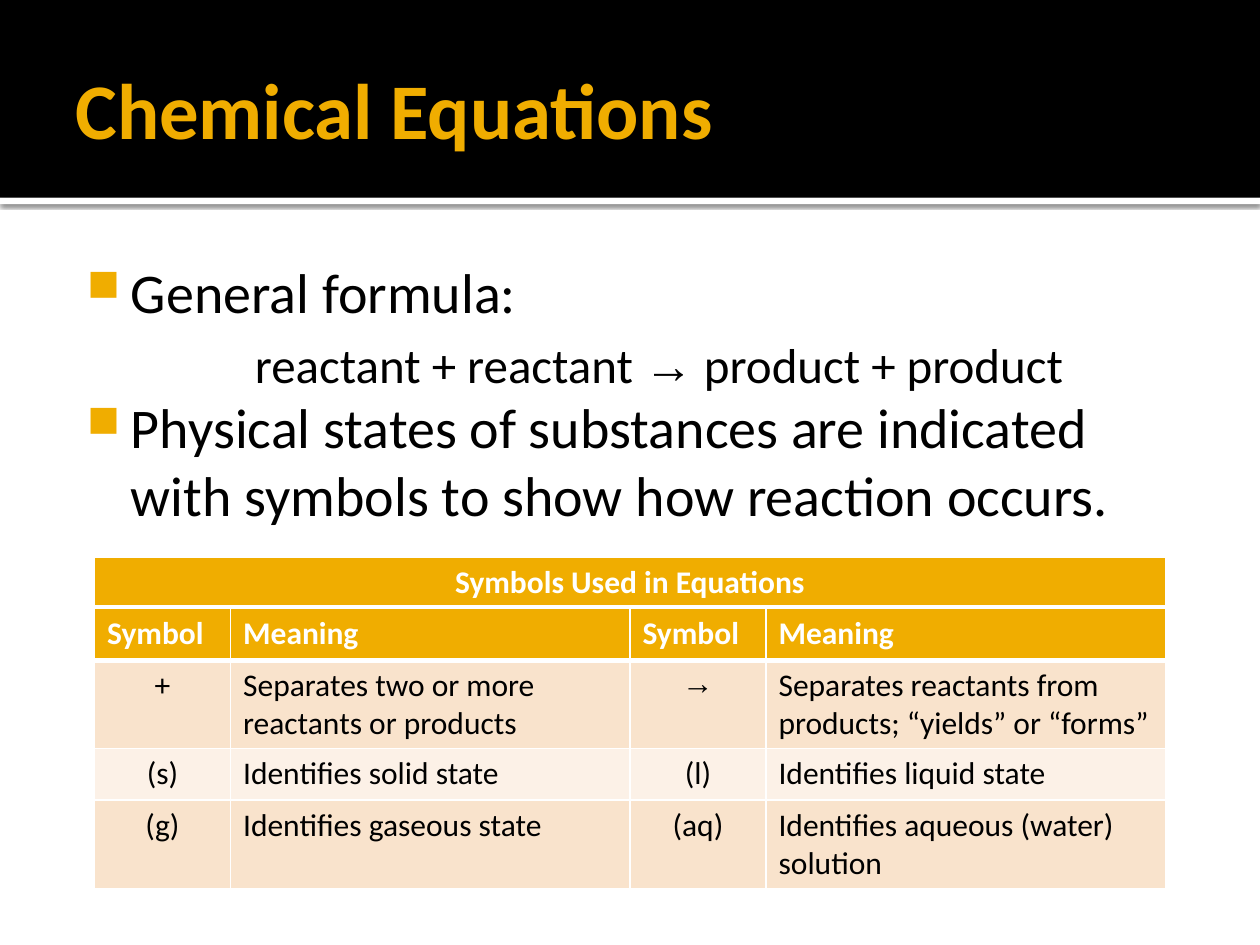
import dataclasses
import typing

import lxml.etree
import pptx
import pptx.dml.color
import pptx.enum.shapes
import pptx.enum.text
import pptx.oxml
import pptx.oxml.ns
import pptx.util

Inches = pptx.util.Inches
Pt = pptx.util.Pt
Align = pptx.enum.text.PP_ALIGN
Anchor = pptx.enum.text.MSO_ANCHOR

COLORS = {
    "gold": "F0AD00",
    "black": "000000",
    "white": "FFFFFF",
    "band": "F9E3CC",
    "pale": "FCF1E7",
}
ARROW = "→"
HEADINGS = ("Symbol", "Meaning") * 2
MEANINGS = [
    ("+", "Separates two or more reactants or products",
     ARROW, "Separates reactants from products; “yields” or “forms”"),
    ("(s)", "Identifies solid state", "(l)", "Identifies liquid state"),
    ("(g)", "Identifies gaseous state", "(aq)", "Identifies aqueous (water) solution"),
]


@dataclasses.dataclass
class Frame:
    left: float
    top: float
    width: float
    height: float

    def lengths(self) -> list[int]:
        return [Inches(value) for value in dataclasses.astuple(self)]


@dataclasses.dataclass
class Style:
    size: float
    color: str = "black"
    bold: bool = False
    align: typing.Any = Align.LEFT


@dataclasses.dataclass
class Line:
    text: str
    style: Style
    left: float = 0
    indent: float = 0
    before: float = 0
    bullet: bool = False


@dataclasses.dataclass
class Row:
    texts: tuple[str, ...]
    height: float
    fill: str
    styles: tuple[Style, ...]
    bottom: float = 1


def rgb(name: str) -> pptx.dml.color.RGBColor:
    return pptx.dml.color.RGBColor.from_string(COLORS[name])


def add_child(parent, tag: str, **attributes):
    child = lxml.etree.SubElement(parent, pptx.oxml.ns.qn(tag))
    for key, value in attributes.items():
        child.set(key, str(value))
    return child


def write(para, text: str, style: Style) -> None:
    para.alignment = style.align
    before, arrow, after = text.partition(ARROW)
    for part in filter(None, (before, arrow, after)):
        span = para.add_run()
        span.text = part
        span.font.name = "Times New Roman" if part == ARROW else "Calibri"
        span.font.size = Pt(style.size)
        span.font.bold = style.bold
        span.font.color.rgb = rgb(style.color)


def add_bar(page, frame: Frame, color: str):
    bar = page.shapes.add_shape(pptx.enum.shapes.MSO_SHAPE.RECTANGLE, *frame.lengths())
    bar.shadow.inherit = False
    bar.fill.solid()
    bar.fill.fore_color.rgb = rgb(color)
    bar.line.fill.background()
    return bar


def add_shadow(shape) -> None:
    effects = shape._element.spPr.find(pptx.oxml.ns.qn("a:effectLst"))
    shadow = add_child(effects, "a:outerShdw", blurRad=Pt(2.5), dist=Pt(0.8),
                       dir=90 * 60000, algn="tl", rotWithShape=0)
    color = add_child(shadow, "a:srgbClr", val=COLORS["black"])
    add_child(color, "a:alpha", val=60000)


def add_text(page, frame: Frame, margins: Frame, anchor, lines: list[Line]) -> None:
    box = page.shapes.add_textbox(*frame.lengths())
    text = box.text_frame
    text.word_wrap = True
    text.vertical_anchor = anchor
    text.margin_left, text.margin_top, text.margin_right, text.margin_bottom = margins.lengths()
    for index, line in enumerate(lines):
        para = text.add_paragraph() if index else text.paragraphs[0]
        write(para, line.text, line.style)
        para.space_before = Pt(line.before)
        properties = para._p.get_or_add_pPr()
        properties.set("marL", str(Inches(line.left)))
        properties.set("indent", str(Inches(line.indent)))
        if line.bullet:
            color = add_child(properties, "a:buClr")
            add_child(color, "a:srgbClr", val=COLORS["gold"])
            add_child(properties, "a:buSzPct", val=80000)
            add_child(properties, "a:buChar", char="■")


def add_borders(cell, bottom: float, top: float) -> None:
    properties = cell._tc.get_or_add_tcPr()
    widths = {"a:lnL": 1, "a:lnR": 1, "a:lnT": top, "a:lnB": bottom}
    for position, (tag, width) in enumerate(widths.items()):
        border = add_child(properties, tag, w=Pt(width))
        fill = add_child(border, "a:solidFill")
        add_child(fill, "a:srgbClr", val=COLORS["white"])
        properties.insert(position, border)


def add_grid(page, left: float, top: float, widths: list[float], rows: list[Row]) -> None:
    frame = Frame(left, top, sum(widths), sum(row.height for row in rows))
    table = page.shapes.add_table(len(rows), len(widths), *frame.lengths()).table
    for column, width in zip(table.columns, widths):
        column.width = Inches(width)
    above = 1
    for index, row in enumerate(rows):
        table.rows[index].height = Inches(row.height)
        for cell, text, style in zip(table.rows[index].cells, row.texts, row.styles):
            cell.fill.solid()
            cell.fill.fore_color.rgb = rgb(row.fill)
            write(cell.text_frame.paragraphs[0], text, style)
            add_borders(cell, row.bottom, above)
        above = row.bottom


def main() -> None:
    deck = pptx.Presentation()
    deck.slide_width, deck.slide_height = Inches(10), Inches(7.5)
    page = deck.slides.add_slide(deck.slide_layouts[6])

    add_shadow(add_bar(page, Frame(0, 1.57, 10, 0.05), "white"))
    add_bar(page, Frame(0, 0, 10, 1.57), "black")
    add_text(page, Frame(0.5, 0.17, 9, 1.37), Frame(0.1, 0.05, 0.05, 0.05), Anchor.MIDDLE,
             [Line("Chemical Equations", Style(45, "gold", True))])

    body = Style(32)
    add_text(page, Frame(0.5, 1.94, 9, 5.06), Frame(0.06, 0.1, 0.1, 0.05), Anchor.TOP, [
        Line("General formula:", body, 0.48, -0.35, bullet=True),
        Line(f"reactant + reactant {ARROW} product + product",
             Style(28, align=Align.CENTER), 0.5, before=5.6),
        Line("Physical states of substances are indicated with symbols to show how "
             "reaction occurs.", body, 0.48, -0.35, bullet=True),
    ])

    heading = Style(18, "white", True)
    caption = dataclasses.replace(heading, align=Align.CENTER)
    add_grid(page, 0.75, 4.42, [8.5],
             [Row(("Symbols Used in Equations",), 0.4, "gold", (caption,), 3)])

    cell_styles = (Style(18, align=Align.CENTER), Style(18)) * 2
    rows = [Row(HEADINGS, 0.41, "gold", (heading,) * 4, 3)]
    for texts, height, fill in zip(MEANINGS, (0.7, 0.41, 0.7), ("band", "pale", "band")):
        rows.append(Row(texts, height, fill, cell_styles))
    add_grid(page, 0.75, 4.83, [1.08, 3.17] * 2, rows)

    deck.save("out.pptx")


if __name__ == "__main__":
    main()
